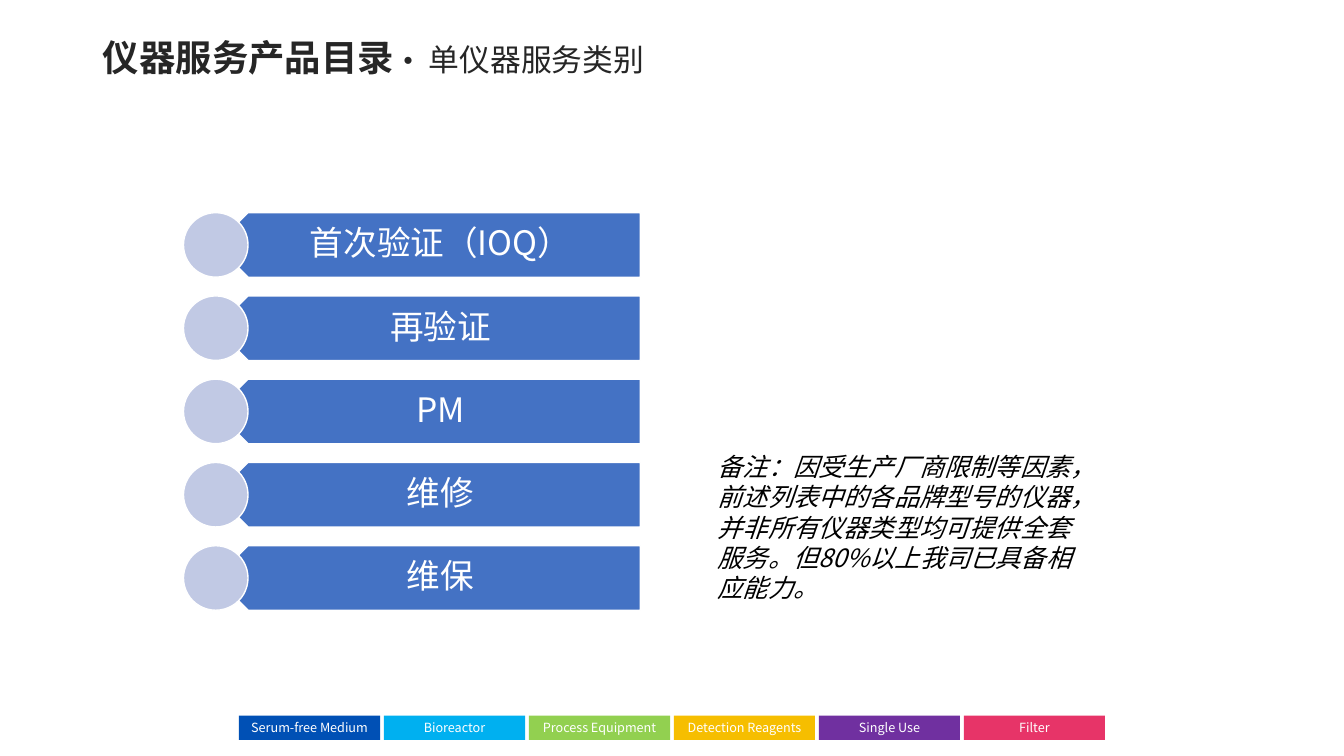
from pptx import Presentation
from pptx.dml.color import RGBColor
from pptx.enum.shapes import MSO_SHAPE
from pptx.enum.text import MSO_ANCHOR, MSO_AUTO_SIZE, PP_ALIGN
from pptx.util import Inches, Pt

FONT = "Noto Sans CJK SC"
WHITE = RGBColor(0xFF, 0xFF, 0xFF)
BLACK = RGBColor(0, 0, 0)
DARK = RGBColor(0x26, 0x26, 0x26)
BLUE = RGBColor(0x44, 0x72, 0xC4)
PALE = RGBColor(0xC1, 0xC9, 0xE4)
TABS = [
    ("Serum-free Medium", RGBColor(0x00, 0x50, 0xB5)),
    ("Bioreactor", RGBColor(0x00, 0xB0, 0xF0)),
    ("Process Equipment", RGBColor(0x92, 0xD0, 0x50)),
    ("Detection Reagents", RGBColor(0xF6, 0xBE, 0x00)),
    ("Single Use", RGBColor(0x70, 0x30, 0xA0)),
    ("Filter", RGBColor(0xE7, 0x34, 0x68)),
]
ITEMS = ["首次验证（IOQ）", "再验证", "PM", "维修", "维保"]
NOTE = [
    "备注：因受生产厂商限制等因素，",
    "前述列表中的各品牌型号的仪器，",
    "并非所有仪器类型均可提供全套",
    "服务。但80%以上我司已具备相",
    "应能力。",
]

deck = Presentation()
deck.slide_width, deck.slide_height = Inches(13.33), Inches(7.5)
slide = deck.slides.add_slide(deck.slide_layouts[5])


def add_run(para, text, size, color, bold=False, italic=False):
    run = para.add_run()
    run.text = text
    font = run.font
    font.name, font.size, font.color.rgb = FONT, Pt(size), color
    font.bold, font.italic = bold, italic


def add_box(kind, left, top, width, height, fill):
    shape = slide.shapes.add_shape(
        kind, Inches(left), Inches(top), Inches(width), Inches(height))
    shape.shadow.inherit = False
    shape.fill.solid()
    shape.fill.fore_color.rgb = fill
    shape.line.fill.background()
    return shape


for i, (name, color) in enumerate(TABS):
    tab = add_box(MSO_SHAPE.RECTANGLE, 2.37 + 1.438 * i, 7.1, 1.4, 0.24, color)
    frame = tab.text_frame
    frame.margin_left = frame.margin_right = 0
    frame.margin_top = frame.margin_bottom = 0
    frame.vertical_anchor = MSO_ANCHOR.MIDDLE
    para = frame.paragraphs[0]
    para.alignment = PP_ALIGN.CENTER
    add_run(para, name, 9, WHITE)

title = slide.shapes.title
title.left, title.top = Inches(0.92), Inches(0.29)
title.width, title.height = Inches(6.28), Inches(0.54)
frame = title.text_frame
frame.auto_size = MSO_AUTO_SIZE.NONE
frame.vertical_anchor = MSO_ANCHOR.MIDDLE
para = frame.paragraphs[0]
para.alignment = PP_ALIGN.LEFT
add_run(para, "仪器服务产品目录", 26, DARK, bold=True)
add_run(para, "· ", 20, DARK, bold=True)
add_run(para, "单仪器服务类别", 22, DARK)

for i, name in enumerate(ITEMS):
    top = 2.11 + 0.826 * i
    bar = add_box(MSO_SHAPE.PENTAGON, 2.14, top, 4.21, 0.64, BLUE)
    bar.rotation = 180
    dot = add_box(MSO_SHAPE.OVAL, 1.82, top, 0.64, 0.64, PALE)
    for shape in (bar, dot):
        shape.line.color.rgb = WHITE
        shape.line.width = Pt(1)
    label = slide.shapes.add_textbox(
        Inches(2.3), Inches(top), Inches(4.05), Inches(0.64))
    frame = label.text_frame
    frame.word_wrap = True
    frame.vertical_anchor = MSO_ANCHOR.MIDDLE
    frame.margin_left, frame.margin_right = Inches(0.28), Inches(0.19)
    frame.margin_top = frame.margin_bottom = Inches(0.1)
    para = frame.paragraphs[0]
    para.alignment = PP_ALIGN.CENTER
    para.line_spacing = 0.9
    add_run(para, name, 24, WHITE)

note = slide.shapes.add_textbox(
    Inches(7.02), Inches(4.43), Inches(4.24), Inches(1.62))
frame = note.text_frame
frame.word_wrap = True
for i, line in enumerate(NOTE):
    para = frame.add_paragraph() if i else frame.paragraphs[0]
    add_run(para, line, 18, BLACK, italic=True)

deck.save("out.pptx")
